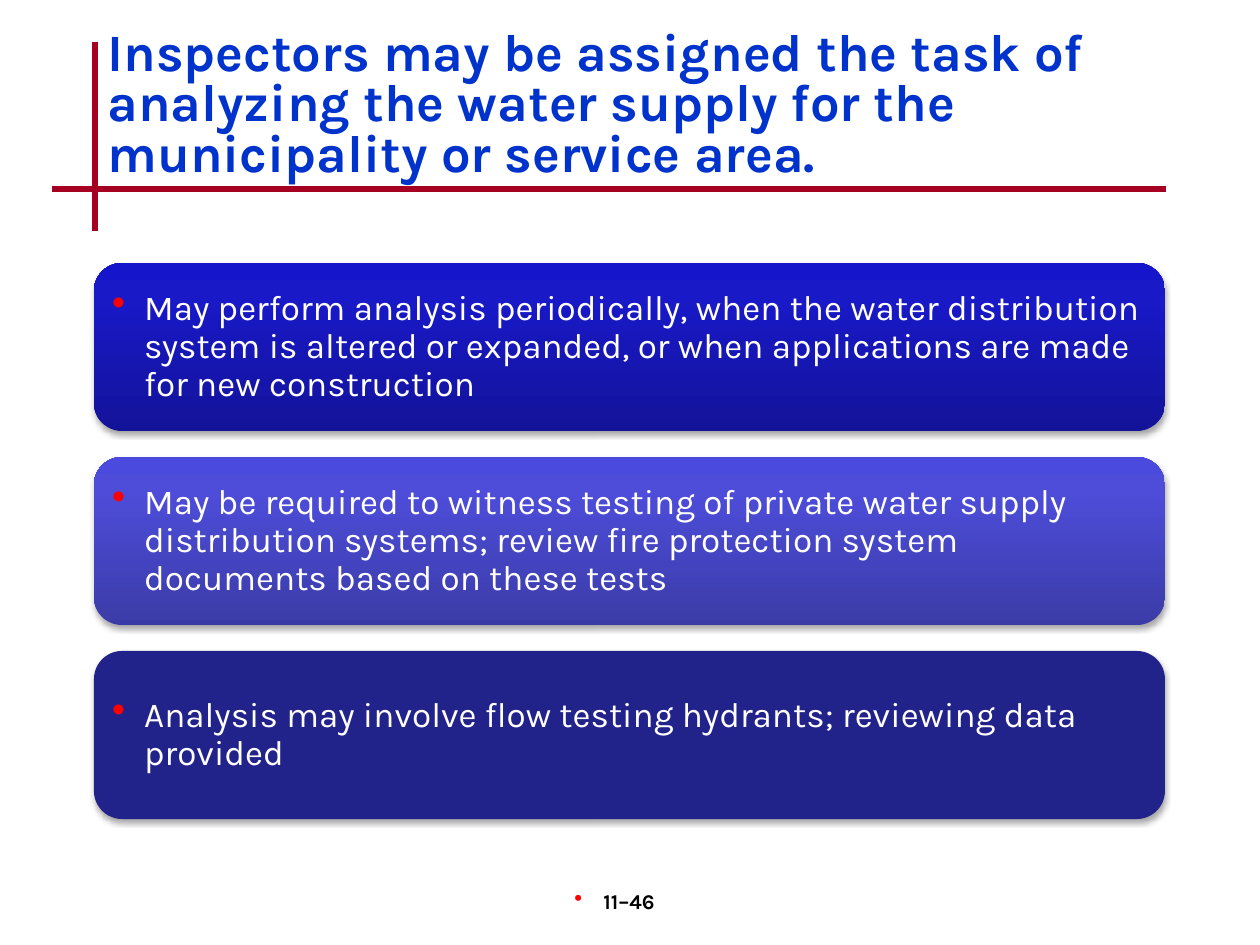
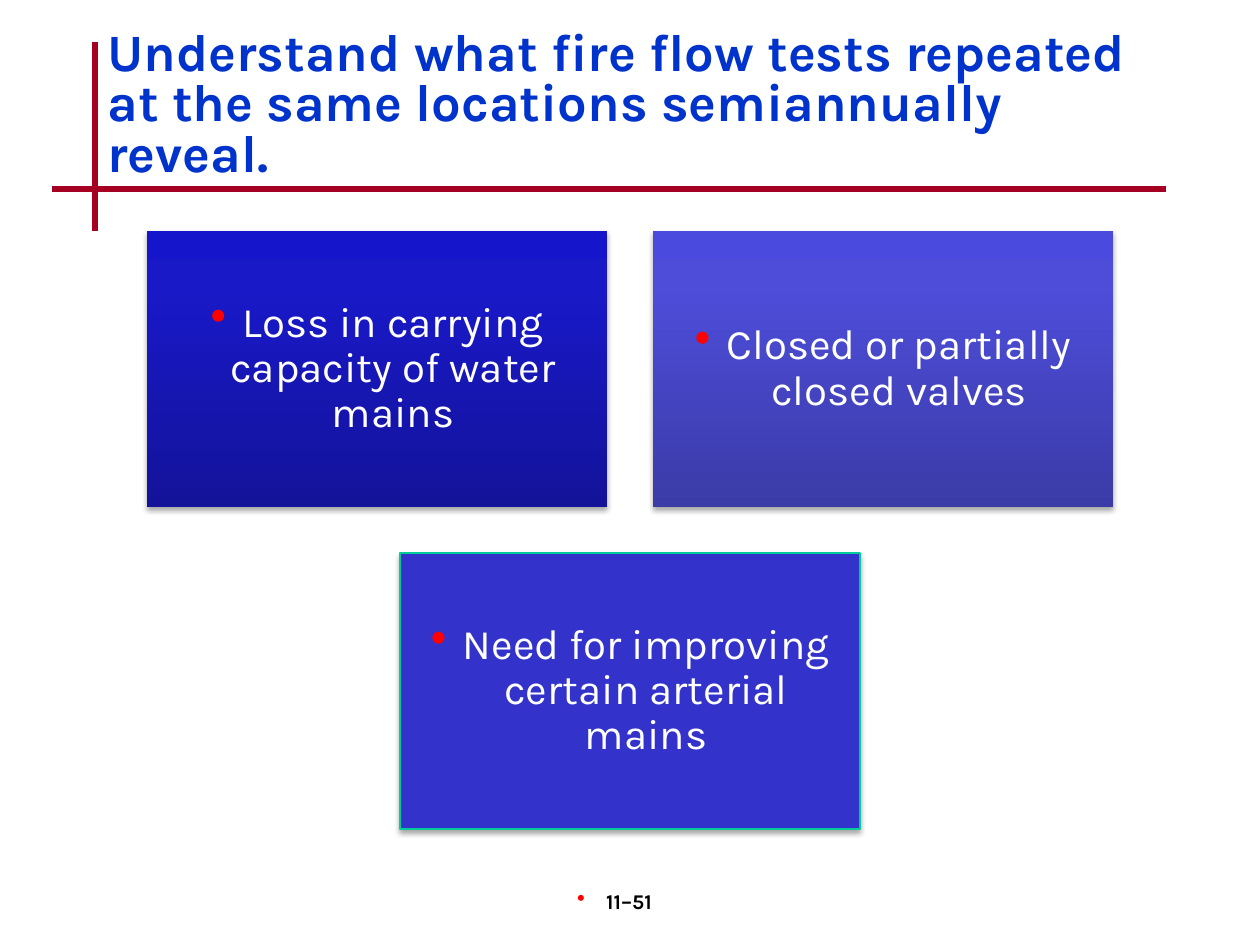
from copy import deepcopy

from lxml.etree import SubElement
from pptx import Presentation
from pptx.dml.color import RGBColor
from pptx.enum.shapes import MSO_CONNECTOR, MSO_SHAPE
from pptx.enum.text import MSO_ANCHOR, PP_ALIGN
from pptx.oxml.ns import qn
from pptx.util import Pt

PX = 914400 / 126
SLIDE_W, SLIDE_H = 1260, 945
FONT = "Karla"

TITLE_BLUE = RGBColor(0x00, 0x33, 0xCC)
RULE_RED = RGBColor(0xA5, 0x00, 0x21)
BULLET_RED = RGBColor(0xFF, 0x00, 0x00)
BLACK = RGBColor(0x00, 0x00, 0x00)
WHITE = RGBColor(0xFF, 0xFF, 0xFF)
NAVY = RGBColor(0x22, 0x22, 0x8B)
MID_BLUE = RGBColor(0x33, 0x33, 0xCC)
EDGE_GREEN = RGBColor(0x00, 0xCC, 0x99)
# Gradient colours run from the bottom edge to the top edge.
DEEP_BLUE = (RGBColor(0x13, 0x13, 0x9A), RGBColor(0x19, 0x19, 0xC8), RGBColor(0x15, 0x15, 0xCC))
SOFT_BLUE = (RGBColor(0x3B, 0x3B, 0xA8), RGBColor(0x4D, 0x4D, 0xDA), RGBColor(0x4A, 0x4A, 0xDE))
GRADIENT_STOPS = (0, 0.8, 1)


def px(*lengths):
    return [round(length * PX) for length in lengths]


def add_xml(parent, tag, **attributes):
    return SubElement(parent, qn(tag), {k: str(v) for k, v in attributes.items()})


class Deck:
    def __init__(self):
        self.prs = Presentation()
        self.prs.slide_width, self.prs.slide_height = px(SLIDE_W, SLIDE_H)
        self.s = None

    def slide(self, title, number):
        """Start a slide with its crossed rules, title and page number."""
        self.s = self.prs.slides.add_slide(self.prs.slide_layouts[6])
        self.rule(95, 42, 95, 231)
        self.rule(52, 189, 1166, 189)
        self.text(number, 494, 882, 262, 63, 12, BLACK, PP_ALIGN.CENTER, bullet=(7, 29))
        self.text(title, 95, 25, 1071, 126, 30, TITLE_BLUE, PP_ALIGN.LEFT, spacing=0.8)

    def rule(self, x1, y1, x2, y2):
        line = self.s.shapes.add_connector(MSO_CONNECTOR.STRAIGHT, *px(x1, y1, x2, y2))
        line.line.color.rgb = RULE_RED
        line.line.width = Pt(3)
        add_xml(line._element.spPr, "a:effectLst")

    def text(self, text, x, y, w, h, size, color, align, spacing=None, bullet=None):
        sp = self.s.shapes.add_textbox(*px(x, y, w, h))
        self.fill_text(sp.text_frame, text, size, color, align, True, spacing, bullet)

    def fill_text(self, tf, text, size, color, align, bold=False, spacing=None, bullet=None):
        tf.word_wrap = True
        p = tf.paragraphs[0]
        p.text = text
        p.alignment = align
        if spacing:
            p.line_spacing = spacing
        if bullet:
            self.bullet(p, *bullet)
        r = p.runs[0]
        r.font.name, r.font.size, r.font.bold = FONT, Pt(size), bold
        r.font.color.rgb = color

    def bullet(self, p, margin, hang):
        pPr = p._p.get_or_add_pPr()
        margin, hang = px(margin, hang)
        pPr.set("marL", str(margin))
        pPr.set("indent", str(-hang))
        add_xml(add_xml(pPr, "a:buClr"), "a:srgbClr", val=BULLET_RED)
        add_xml(pPr, "a:buSzPct", val=110000)
        add_xml(pPr, "a:buChar", char="•")

    def card(self, kind, text, x, y, w, h, fill, size, align, inset, edge=None):
        """Draw a shadowed block with one bullet; a tuple as fill is a gradient."""
        sp = self.s.shapes.add_shape(kind, *px(x, y, w, h))
        if isinstance(fill, tuple) and not isinstance(fill, RGBColor):
            self.gradient(sp, fill)
        else:
            sp.fill.solid()
            sp.fill.fore_color.rgb = fill
        if edge:
            sp.line.color.rgb = edge
            sp.line.width = Pt(0.75)
        else:
            sp.line.fill.background()
        self.shadow(sp)
        tf = sp.text_frame
        tf.margin_left, tf.margin_top, tf.margin_right, tf.margin_bottom = px(*[inset] * 4)
        tf.vertical_anchor = MSO_ANCHOR.MIDDLE
        self.fill_text(tf, text, size, WHITE, align, spacing=0.9, bullet=(32, 32))

    def gradient(self, sp, colors):
        sp.fill.gradient()
        sp.fill.gradient_angle = 90
        stops = sp._element.spPr.find(qn("a:gradFill")).find(qn("a:gsLst"))
        stops.append(deepcopy(stops[-1]))
        for stop, position, color in zip(sp.fill.gradient_stops, GRADIENT_STOPS, colors):
            stop.position = position
            stop.color.rgb = color

    def shadow(self, sp):
        sp.shadow.inherit = False
        effects = sp._element.spPr.find(qn("a:effectLst"))
        outer = add_xml(effects, "a:outerShdw", blurRad=Pt(3.1), dist=Pt(1.8),
                        dir=5400000, rotWithShape=0)
        add_xml(add_xml(outer, "a:srgbClr", val=BLACK), "a:alpha", val=35000)


def water_supply_analysis(deck):
    deck.slide("Inspectors may be assigned the task of analyzing the water supply "
               "for the municipality or service area.", "11–46")
    duties = [
        ("May perform analysis periodically, when the water distribution system is "
         "altered or expanded, or when applications are made for new construction", DEEP_BLUE),
        ("May be required to witness testing of private water supply distribution "
         "systems; review fire protection system documents based on these tests", SOFT_BLUE),
        ("Analysis may involve flow testing hydrants; reviewing data provided", NAVY),
    ]
    top, height, gap = 263, 168, 26
    for i, (duty, fill) in enumerate(duties):
        deck.card(MSO_SHAPE.ROUNDED_RECTANGLE, duty, 94, top + i * (height + gap), 1071, height,
                  fill, 20, PP_ALIGN.LEFT, 10)


def repeated_flow_tests(deck):
    deck.slide("Understand what fire flow tests repeated at the same locations "
               "semiannually reveal.", "11–51")
    left, top, width, height, gap = 147, 231, 460, 276, 46
    step_x, step_y = width + gap, height + gap
    findings = [
        ("Loss in carrying capacity of water mains", left, top, DEEP_BLUE, None),
        ("Closed or partially closed valves", left + step_x, top, SOFT_BLUE, None),
        ("Need for improving certain arterial mains", left + step_x // 2, top + step_y,
         MID_BLUE, EDGE_GREEN),
    ]
    for finding, x, y, fill, edge in findings:
        deck.card(MSO_SHAPE.RECTANGLE, finding, x, y, width, height,
                  fill, 24, PP_ALIGN.CENTER, 12, edge)


def main():
    deck = Deck()
    water_supply_analysis(deck)
    repeated_flow_tests(deck)
    deck.prs.save("out.pptx")


if __name__ == "__main__":
    main()
